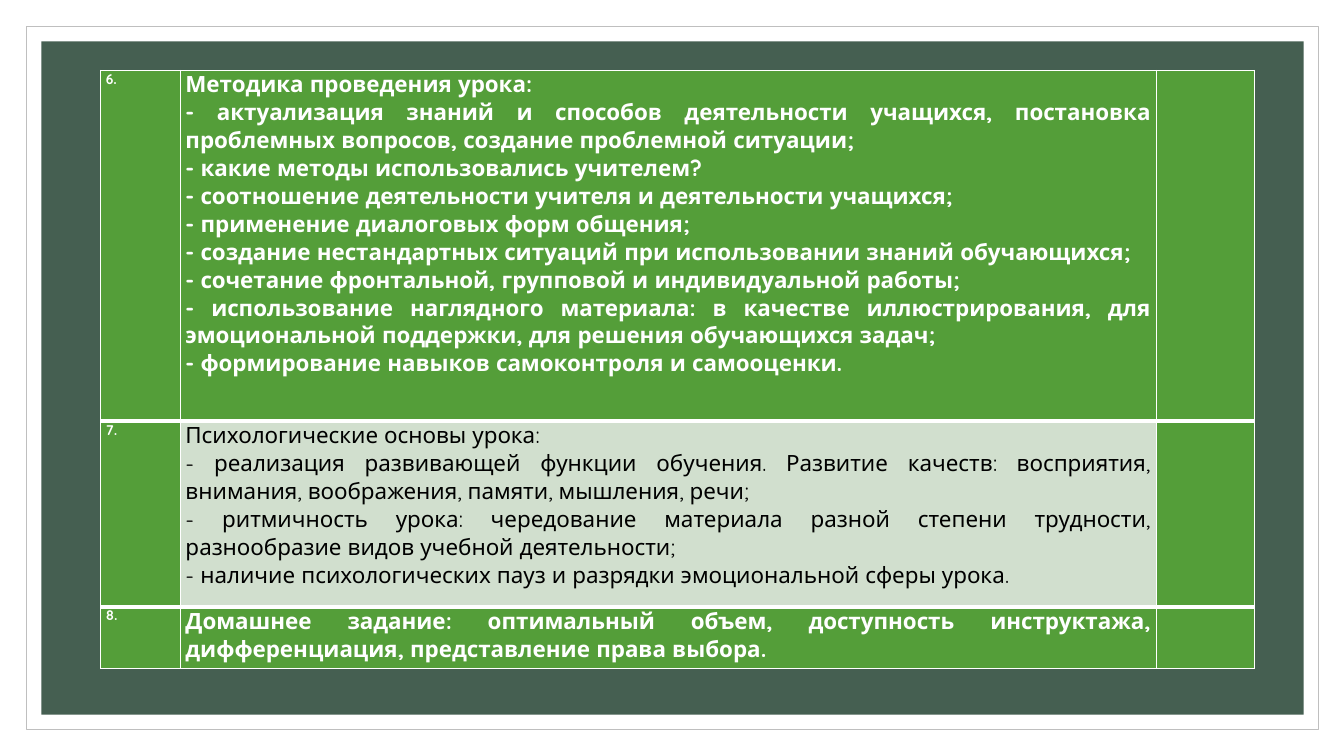
import pptx
import pptx.dml.color
import pptx.enum.shapes
import pptx.enum.text
import pptx.oxml
import pptx.oxml.ns
import pptx.util
from pptx.util import Inches

RGBColor = pptx.dml.color.RGBColor
WHITE = RGBColor(0xFF, 0xFF, 0xFF)
BLACK = RGBColor(0x00, 0x00, 0x00)
GRAY = RGBColor(0xBF, 0xBF, 0xBF)
DARK_GREEN = RGBColor(0x45, 0x5F, 0x51)
GREEN = RGBColor(0x54, 0x9E, 0x39)
PALE_GREEN = RGBColor(0xD1, 0xDF, 0xCE)

COLUMN_WIDTHS = [0.79, 9.68, 0.97]
ROW_HEIGHTS = [3.48, 1.84, 0.61]
LESSON_ROWS = [
    ("6.", GREEN, WHITE, True, [
        "Методика проведения урока:",
        "- актуализация знаний и способов деятельности учащихся, постановка проблемных вопросов, создание проблемной ситуации;",
        "- какие методы использовались учителем?",
        "- соотношение деятельности учителя и деятельности учащихся;",
        "- применение диалоговых форм общения;",
        "- создание нестандартных ситуаций при использовании знаний обучающихся;",
        "- сочетание фронтальной, групповой и индивидуальной работы;",
        "- использование наглядного материала: в качестве иллюстрирования, для эмоциональной поддержки, для решения обучающихся задач;",
        "- формирование навыков самоконтроля и самооценки.",
    ]),
    ("7.", PALE_GREEN, BLACK, False, [
        "Психологические основы урока:",
        "- реализация развивающей функции обучения. Развитие качеств: восприятия, внимания, воображения, памяти, мышления, речи;",
        "- ритмичность урока: чередование материала разной степени трудности, разнообразие видов учебной деятельности;",
        "- наличие психологических пауз и разрядки эмоциональной сферы урока.",
    ]),
    ("8.", GREEN, WHITE, True, [
        "Домашнее задание: оптимальный объем, доступность инструктажа, дифференциация, представление права выбора.",
    ]),
]


def write_text(para, text, size=16, color=WHITE, bold=True, font="Quicksand"):
    para.alignment = pptx.enum.text.PP_ALIGN.JUSTIFY
    span = para.add_run()
    span.text = text
    span.font.name = font
    span.font.size = pptx.util.Pt(size)
    span.font.bold = bold
    span.font.color.rgb = color


class LessonPage:
    def __init__(self, page):
        self.page = page
        self.border_color = WHITE
        self.side_margin = Inches(0.05)

    def panel(self, left, top, width, height, fill, line=None):
        box = self.page.shapes.add_shape(
            pptx.enum.shapes.MSO_SHAPE.RECTANGLE,
            Inches(left), Inches(top), Inches(width), Inches(height))
        box.shadow.inherit = False
        box.fill.solid()
        box.fill.fore_color.rgb = fill
        if line is None:
            box.line.fill.background()
        else:
            box.line.color.rgb = line
            box.line.width = pptx.util.Pt(0.5)

    def borders(self, cell, top, bottom):
        properties = cell._tc.get_or_add_tcPr()
        widths = [("lnL", 1), ("lnR", 1), ("lnT", top), ("lnB", bottom)]
        for position, (side, width) in enumerate(widths):
            properties.insert(position, pptx.oxml.parse_xml(
                f'<a:{side} {pptx.oxml.ns.nsdecls("a")} w="{pptx.util.Pt(width)}">'
                f'<a:solidFill><a:srgbClr val="{self.border_color}"/></a:solidFill>'
                f'</a:{side}>'))

    def fill_cell(self, cell, fill, lines, **style):
        cell.margin_left = cell.margin_right = self.side_margin
        cell.margin_top = cell.margin_bottom = 0
        cell.fill.solid()
        cell.fill.fore_color.rgb = fill
        for index, line in enumerate(lines):
            frame = cell.text_frame
            para = frame.paragraphs[0] if index == 0 else frame.add_paragraph()
            write_text(para, line, **style)

    def lesson_table(self, left, top):
        table = self.page.shapes.add_table(
            len(ROW_HEIGHTS), len(COLUMN_WIDTHS), Inches(left), Inches(top),
            Inches(sum(COLUMN_WIDTHS)), Inches(sum(ROW_HEIGHTS))).table
        for column, width in zip(table.columns, COLUMN_WIDTHS):
            column.width = Inches(width)
        for row, height in zip(table.rows, ROW_HEIGHTS):
            row.height = Inches(height)
        last = len(LESSON_ROWS) - 1
        for index, (number, fill, color, bold, lines) in enumerate(LESSON_ROWS):
            number_cell, topic_cell, mark_cell = table.rows[index].cells
            self.fill_cell(number_cell, GREEN, [number], size=10)
            self.fill_cell(topic_cell, fill, lines, color=color, bold=bold)
            self.fill_cell(mark_cell, GREEN, [])
            for cell in (number_cell, topic_cell, mark_cell):
                self.borders(cell, 3 if index > 0 else 1, 3 if index < last else 1)


def main():
    deck = pptx.Presentation()
    deck.slide_width = Inches(13.33)
    deck.slide_height = Inches(7.5)
    lesson = LessonPage(deck.slides.add_slide(deck.slide_layouts[6]))
    lesson.panel(0.26, 0.26, 12.82, 6.98, WHITE, line=GRAY)
    lesson.panel(0.41, 0.41, 12.52, 6.68, DARK_GREEN)
    lesson.lesson_table(1, 0.7)
    deck.save("out.pptx")


if __name__ == "__main__":
    main()
